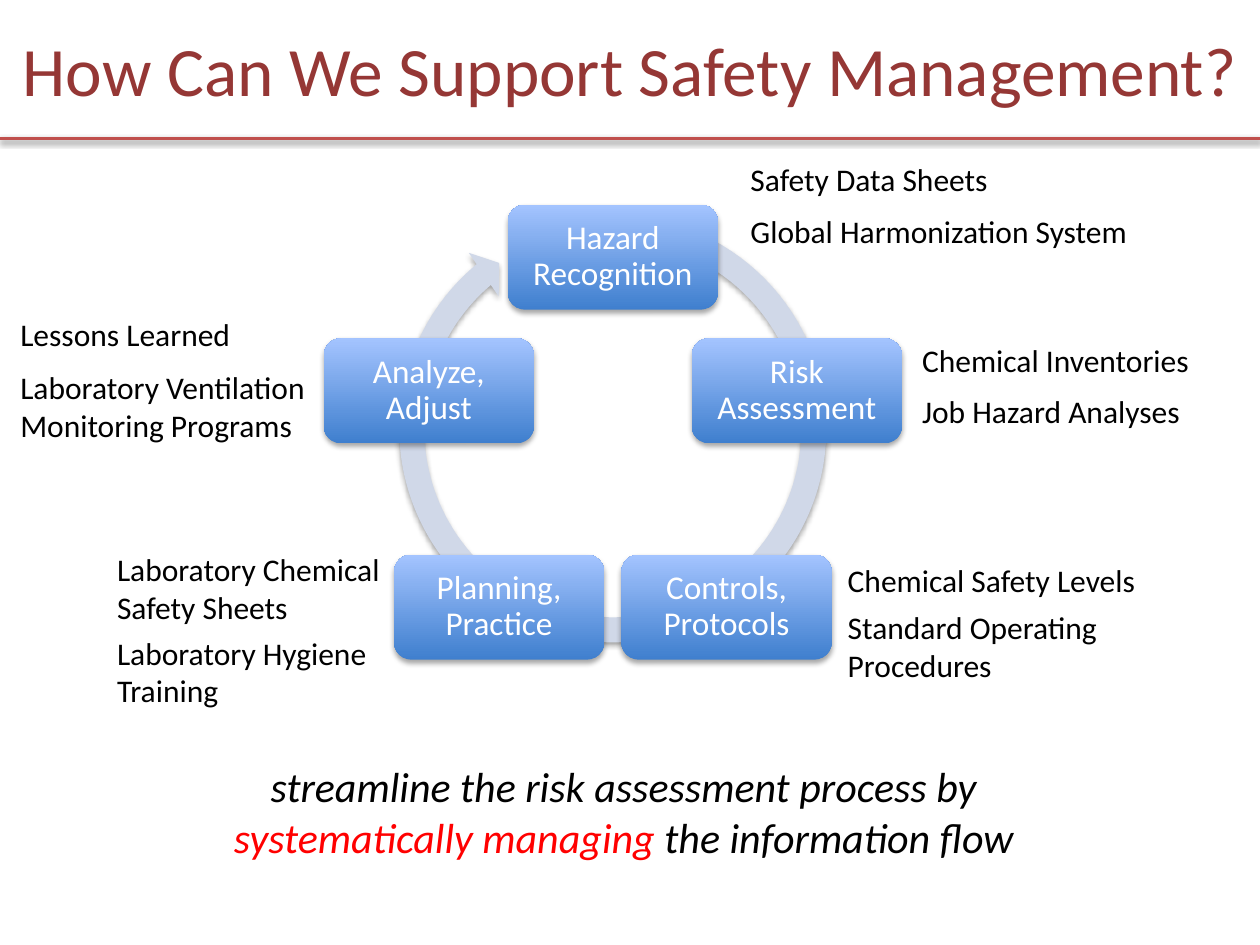
import math

import pptx
import pptx.util
import pptx.dml.color
import pptx.enum.shapes
import pptx.enum.text
import pptx.oxml
import pptx.oxml.ns

Cm = pptx.util.Cm
Pt = pptx.util.Pt
RGBColor = pptx.dml.color.RGBColor
SHAPE = pptx.enum.shapes.MSO_SHAPE
ALIGN = pptx.enum.text.PP_ALIGN
ANCHOR = pptx.enum.text.MSO_ANCHOR

MAROON = RGBColor(0x95, 0x37, 0x35)
RULE = RGBColor(0xC0, 0x50, 0x4D)
BLACK = RGBColor(0, 0, 0)
RED = RGBColor(0xFF, 0, 0)
WHITE = RGBColor(0xFF, 0xFF, 0xFF)
RING = RGBColor(0xD0, 0xD8, 0xE8)
DEEP = RGBColor(0x3F, 0x7F, 0xCE)
LIGHT = RGBColor(0xA4, 0xC4, 0xFF)

# Steps of the cycle, clockwise from the top
STEPS = ["Hazard Recognition", "Risk Assessment", "Controls, Protocols",
         "Planning, Practice", "Analyze, Adjust"]

# Left, width, then (top, wording) of the notes beside each step, in cm
NOTES = [
    (14.88, 9.3, [(3.1, "Safety Data Sheets"),
                  (4.14, "Global Harmonization System")]),
    (18.34, 6.6, [(6.76, "Chemical Inventories"),
                  (7.77, "Job Hazard Analyses")]),
    (16.84, 8, [(11.18, "Chemical Safety Levels"),
                (12.14, "Standard Operating Procedures")]),
    (2.11, 6, [(10.97, "Laboratory Chemical Safety Sheets"),
               (12.65, "Laboratory Hygiene Training")]),
    (0.16, 7.4, [(6.22, "Lessons Learned"),
                 (7.29, "Laboratory Ventilation Monitoring Programs")]),
]


def add_run(para, text, size, color, slant=None):
    run = para.add_run()
    run.text = text
    font = run.font
    font.name = "Calibri"
    font.size = Pt(size)
    font.color.rgb = color
    font.italic = slant


def add_box(slide, left, top, width, height):
    box = slide.shapes.add_textbox(Cm(left), Cm(top), Cm(width), Cm(height))
    box.text_frame.word_wrap = True
    return box.text_frame


def add_shade(shape, alpha, dist):
    """Give a shape or connector a soft shadow straight below it."""
    xml = (f'<a:effectLst {pptx.oxml.ns.nsdecls("a")}>'
           f'<a:outerShdw blurRad="{Pt(3.1)}" dist="{Pt(dist)}" dir="5400000" rotWithShape="0">'
           f'<a:srgbClr val="000000"><a:alpha val="{alpha * 1000}"/></a:srgbClr>'
           '</a:outerShdw></a:effectLst>')
    shape._element.spPr.append(pptx.oxml.parse_xml(xml))


def add_head(slide, left, top, width, height):
    # Title
    frame = add_box(slide, left, top, width, height)
    frame.vertical_anchor = ANCHOR.MIDDLE
    para = frame.paragraphs[0]
    para.alignment = ALIGN.CENTER
    add_run(para, "How Can We Support Safety Management?", 39.6, MAROON)

    # Rule below the title
    base = Cm(top + height)
    rule = slide.shapes.add_connector(
        pptx.enum.shapes.MSO_CONNECTOR.STRAIGHT,
        Cm(left), base, Cm(left + width), base)
    rule.line.color.rgb = RULE
    rule.line.width = Pt(2)
    add_shade(rule, 38, 1.6)


def add_step(slide, left, top, width, height, text):
    step = slide.shapes.add_shape(
        SHAPE.ROUNDED_RECTANGLE, Cm(left), Cm(top), Cm(width), Cm(height))
    step.fill.gradient()
    step.fill.gradient_angle = 90
    for stop, color, spot in zip(step.fill.gradient_stops, (DEEP, LIGHT), (0, 1)):
        stop.color.rgb = color
        stop.position = spot
    step.line.fill.background()
    add_shade(step, 35, 1.8)

    frame = step.text_frame
    frame.word_wrap = True
    frame.vertical_anchor = ANCHOR.MIDDLE
    frame.margin_left = frame.margin_right = Cm(0.2)
    frame.margin_top = frame.margin_bottom = Cm(0.2)
    para = frame.paragraphs[0]
    para.alignment = ALIGN.CENTER
    para.line_spacing = 0.9
    add_run(para, text, 19, WHITE)


def add_cycle(slide, left, top, size):
    # Ring with its arrowhead
    ring = slide.shapes.add_shape(
        SHAPE.CIRCULAR_ARROW, Cm(left), Cm(top), Cm(size), Cm(size))
    for i, value in enumerate((0.055, 3.307, 138.042, 173.688, 0.058)):
        ring.adjustments[i] = value
    ring.fill.solid()
    ring.fill.fore_color.rgb = RING
    ring.line.fill.background()
    add_shade(ring, 35, 1.8)

    # Steps, evenly spaced on a circle
    wide, high, reach = 4.24, 2.12, 3.9
    mid_x = left + size / 2
    mid_y = top + size / 2 + 0.44
    for i, text in enumerate(STEPS):
        turn = math.tau * i / len(STEPS)
        add_step(slide, mid_x + reach * math.sin(turn) - wide / 2,
                 mid_y - reach * math.cos(turn) - high / 2, wide, high, text)


def add_notes(slide, left, width, notes):
    for top, text in notes:
        frame = add_box(slide, left, top, width, 1.02)
        add_run(frame.paragraphs[0], text, 18, BLACK)


def add_foot(slide, left, top, width, height):
    para = add_box(slide, left, top, width, height).paragraphs[0]
    para.alignment = ALIGN.CENTER
    add_run(para, "streamline the risk assessment process by ", 24, BLACK, True)
    para.add_line_break()
    add_run(para, "systematically managing ", 24, RED, True)
    add_run(para, "the information flow ", 24, BLACK, True)


def main():
    deck = pptx.Presentation()
    deck.slide_width = Cm(25.4)
    deck.slide_height = Cm(19.05)
    slide = deck.slides.add_slide(deck.slide_layouts[6])

    add_head(slide, 0, 0, 25.4, 2.79)
    add_foot(slide, 1.24, 15.21, 22.86, 2.92)
    add_cycle(slide, 7.77, 4.06, 9.17)
    for left, width, notes in NOTES:
        add_notes(slide, left, width, notes)
    deck.save("out.pptx")


if __name__ == "__main__":
    main()
